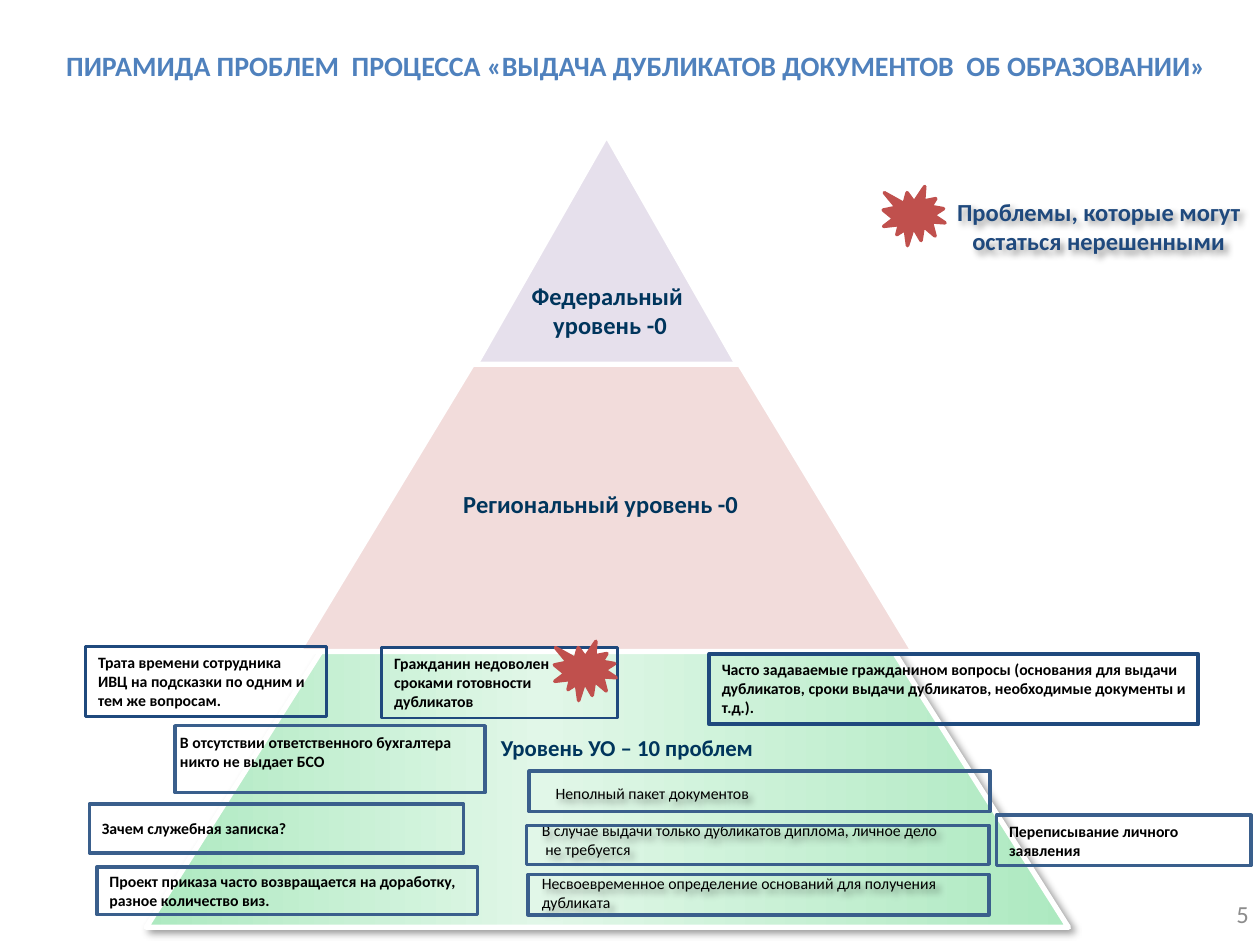
import pptx
import pptx.util
import pptx.oxml
import pptx.oxml.ns
import pptx.dml.color
import pptx.enum.shapes
import pptx.enum.text

COLS, ROWS = 100, 75
HUES = {
    "mint": "ADE9C0", "pale": "E1F7E8", "lilac": "E6E0EC", "rose": "F2DCDB",
    "white": "FFFFFF", "black": "000000", "ink": "00355C", "navy": "1F497D",
    "steel": "3A5F8C", "blue": "4F81BD", "red": "C0504D", "gray": "8C8C8C",
}
KINDS = pptx.enum.shapes.MSO_SHAPE
SIDES = {"left": pptx.enum.text.PP_ALIGN.LEFT,
         "mid": pptx.enum.text.PP_ALIGN.CENTER,
         "right": pptx.enum.text.PP_ALIGN.RIGHT}
SPOTS = {"top": pptx.enum.text.MSO_ANCHOR.TOP,
         "mid": pptx.enum.text.MSO_ANCHOR.MIDDLE}
NS = 'xmlns:a="http://schemas.openxmlformats.org/drawingml/2006/main"'

deck = pptx.Presentation()
deck.slide_width = pptx.util.Inches(10)
deck.slide_height = pptx.util.Inches(7.5)


def rgb(name):
    return pptx.dml.color.RGBColor.from_string(HUES[name])


def part(box, col, row, wide, high):
    return box[0] + col, box[1] + row, wide, high


def place(box):
    col, row = deck.slide_width / COLS, deck.slide_height / ROWS
    return [int(n * unit) for n, unit in zip(box, (col, row, col, row))]


def write(shape, text, size=9, hue="black", bold=True, side="left",
          spot="mid", pad=(0.1, 0.05, 0.1, 0.05), wrap=True):
    frame = shape.text_frame
    frame.text = text
    frame.word_wrap = wrap
    frame.auto_size = pptx.enum.text.MSO_AUTO_SIZE.NONE
    frame.vertical_anchor = SPOTS[spot]
    (frame.margin_left, frame.margin_top,
     frame.margin_right, frame.margin_bottom) = map(pptx.util.Inches, pad)
    for para in frame.paragraphs:
        para.alignment = SIDES[side]
        for run in para.runs:
            font = run.font
            font.name, font.size, font.bold = "Calibri", pptx.util.Pt(size), bold
            font.color.rgb = rgb(hue)


def label(slide, box, text, **form):
    shape = slide.shapes.add_textbox(*place(box))
    write(shape, text, **form)
    return shape


def draw(slide, kind, box, fill=None, line=None, width=2.0):
    shape = slide.shapes.add_shape(kind, *place(box))
    shape.shadow.inherit = False
    if fill:
        shape.fill.solid()
        shape.fill.fore_color.rgb = rgb(fill)
    else:
        shape.fill.background()
    if line:
        shape.line.color.rgb = rgb(line)
        shape.line.width = pptx.util.Pt(width)
    else:
        shape.line.fill.background()
    return shape


def shade(shape):
    shape.shadow.inherit = False
    glow = shape.element.spPr.find(pptx.oxml.ns.qn("a:effectLst"))
    glow.append(pptx.oxml.parse_xml(
        f'<a:outerShdw {NS} blurRad="50800" dist="38100" dir="2700000">'
        f'<a:srgbClr val="{HUES["black"]}"><a:alpha val="40000"/></a:srgbClr>'
        '</a:outerShdw>'))


def blend(shape, stops):
    marks = "".join(f'<a:gs pos="{spot * 1000}"><a:srgbClr val="{HUES[hue]}"/></a:gs>'
                    for spot, hue in stops)
    props = shape.element.spPr
    old = props.find(pptx.oxml.ns.qn("a:noFill"))
    props.replace(old, pptx.oxml.parse_xml(
        f'<a:gradFill {NS} rotWithShape="1"><a:gsLst>{marks}</a:gsLst>'
        '<a:lin ang="0" scaled="0"/></a:gradFill>'))


def head(slide, box):
    title = slide.shapes.title
    title.left, title.top, title.width, title.height = place(box)
    write(title, "ПИРАМИДА ПРОБЛЕМ  ПРОЦЕССА «ВЫДАЧА ДУБЛИКАТОВ ДОКУМЕНТОВ  ОБ ОБРАЗОВАНИИ»",
          size=16, hue="blue", side="mid", pad=(0.1, 0.05, 0.1, 0.32))


def tower(slide, box):
    base = draw(slide, KINDS.ISOSCELES_TRIANGLE, part(box, 0, 5.1, 73.2, 57.8),
                line="white", width=3)
    blend(base, [(0, "mint"), (43, "pale"), (100, "mint")])
    shade(base)
    draw(slide, KINDS.ISOSCELES_TRIANGLE, part(box, 13.7, 0, 45.7, 40.1),
         "lilac", "white", 3)
    band = draw(slide, KINDS.TRAPEZOID, part(box, 12.1, 18.2, 48.8, 22.8),
                "rose", "white", 3)
    band.adjustments[0] = 0.605
    tiers = [
        ((5.5, 47, 65.3, 3.2), "Уровень УО – 10 проблем", 13),
        ((15.1, 27.6, 42.4, 3.4), "Региональный уровень -0 ", 14),
        ((25.2, 11.1, 22.8, 7.9), "Федеральный\n уровень -0", 14),
    ]
    for cell, text, size in tiers:
        label(slide, part(box, *cell), text, size=size, hue="ink",
              side="mid", spot="top")


def star(slide, box):
    draw(slide, KINDS.EXPLOSION1, box, "red", "red")


def legend(slide, box):
    star(slide, part(box, 0, 0.1, 4.9, 4.7))
    shade(label(slide, part(box, 1.3, 0, 31.6, 5.7),
                "Проблемы, которые могут остаться нерешенными",
                size=14, hue="navy", side="mid", pad=(0.1, 0.09, 0.1, 0.01)))


def needs(slide, box):
    frames = [(0.2, 0, 36.6, 3.2), (0, 4.3, 36.7, 3.1), (0.1, 8.2, 36.6, 3.2)]
    notes = [
        ((1.5, 0.9, 30.4, 1.7), "Неполный пакет документов", 0.05),
        ((0.4, 2.7, 42.6, 5.5),
         "В случае выдачи только дубликатов диплома, личное дело\n не требуется", 0.05),
        ((0.4, 7.5, 42.6, 2.8),
         "Несвоевременное определение оснований для получения\nдубликата", 0.2),
    ]
    for cell, text, top in notes:
        note = draw(slide, KINDS.ROUNDED_RECTANGLE, part(box, *cell))
        note.adjustments[0] = 0
        shade(note)
        write(note, text, bold=False, pad=(0.08, top, 0.08, 0.05))
    for cell in frames:
        draw(slide, KINDS.RECTANGLE, part(box, *cell), line="steel")


def cards(slide, box):
    draw(slide, KINDS.RECTANGLE, part(box, 7.1, 6.7, 24.6, 5.3), line="steel")
    label(slide, part(box, 6.5, 6.8, 24.1, 4),
          "В отсутствии ответственного бухгалтера\nникто не выдает БСО",
          spot="top", wrap=False)
    plain = [
        ((72.3, 13.8, 20.2, 4), "Переписывание личного заявления"),
        ((0.3, 12.9, 29.7, 3.9), "Зачем служебная записка?"),
        ((0.9, 17.9, 30.2, 3.8),
         "Проект приказа часто возвращается на доработку, разное количество виз."),
    ]
    strong = [
        ((49.5, 1, 38.8, 5.6), 2.25,
         "Часто задаваемые гражданином вопросы (основания для выдачи дубликатов, "
         "сроки выдачи дубликатов, необходимые документы и т.д.)."),
        ((0, 0.4, 19.1, 5.6), 1.5,
         "Трата времени сотрудника ИВЦ на подсказки по одним и тем же вопросам."),
        ((23.5, 0.5, 18.7, 5.6), 1.5,
         "Гражданин недоволен сроками готовности дубликатов"),
    ]
    for cell, text in plain:
        write(draw(slide, KINDS.RECTANGLE, part(box, *cell), line="steel"), text)
    for cell, width, text in strong:
        card = draw(slide, KINDS.RECTANGLE, part(box, *cell), line="navy", width=width)
        write(card, text, spot="top")
    star(slide, part(box, 37.2, 0, 4.9, 4.7))


def main():
    slide = deck.slides.add_slide(deck.slide_layouts[5])
    tower(slide, (11.6, 10.7, 73.2, 62.9))
    head(slide, (3.5, 3.1, 94, 6.9))
    legend(slide, (70.1, 14.7, 32.9, 5.7))
    label(slide, (76.8, 70.5, 23.3, 4), "5", size=14, hue="gray",
          bold=False, side="right")
    needs(slide, (41.8, 61.2, 43, 11.4))
    cards(slide, (6.8, 50.9, 92.5, 21.7))
    deck.save("out.pptx")


if __name__ == "__main__":
    main()
